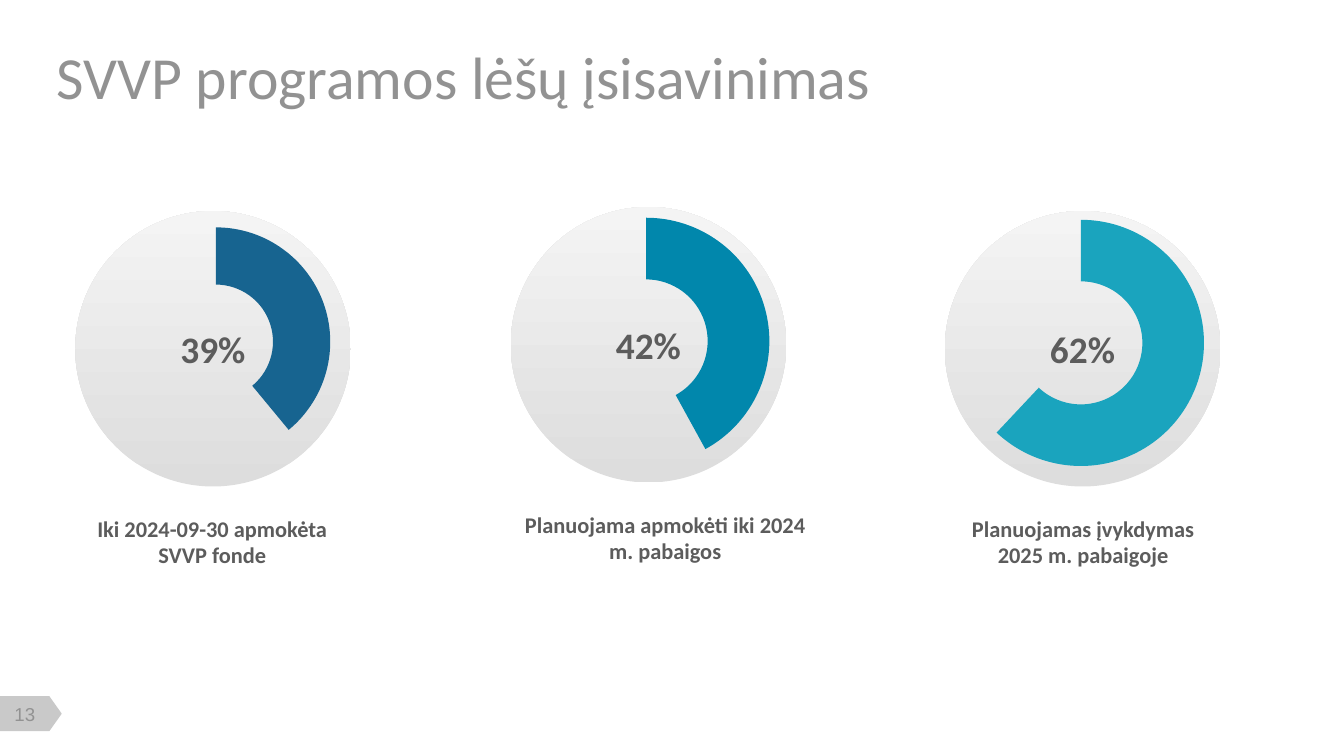
from dataclasses import dataclass

from lxml import etree
from pptx import Presentation
from pptx.chart.data import CategoryChartData
from pptx.dml.color import RGBColor
from pptx.enum.chart import XL_CHART_TYPE
from pptx.enum.shapes import MSO_SHAPE
from pptx.enum.text import MSO_ANCHOR, PP_ALIGN
from pptx.oxml.ns import qn
from pptx.util import Inches, Pt

DOUGHNUT = XL_CHART_TYPE.DOUGHNUT
ELLIPSE = MSO_SHAPE.OVAL
PAGE_TAG = MSO_SHAPE.FLOWCHART_OFFPAGE_CONNECTOR
TOP, MIDDLE = MSO_ANCHOR.TOP, MSO_ANCHOR.MIDDLE
LEFT, CENTER = PP_ALIGN.LEFT, PP_ALIGN.CENTER

GREY, DARK_GREY, TAG_GREY = "929292", "5C5C5C", "C9C9C9"
DISC_BOTTOM, DISC_TOP = "DDDDDD", "F4F4F4"
DISC_SIZE = 2.05
HOLE_PERCENT = 64


@dataclass
class Area:
    left: float
    top: float
    width: float
    height: float

    def lengths(self) -> list:
        return [Inches(v) for v in (self.left, self.top, self.width, self.height)]


@dataclass
class Gauge:
    percent: int
    color: str
    caption: str
    disc: Area
    ring: Area
    plot: Area  # percent of the ring area
    label: Area


GAUGES = [
    Gauge(39, "176490", "Iki 2024-09-30 apmokėta SVVP fonde",
          Area(0.56, 1.57, DISC_SIZE, DISC_SIZE), Area(0.56, 1.44, 2.05, 2.25),
          Area(9.5, 11.2, 83.1, 75.7), Area(0.63, 3.83, 1.9, 0.4)),
    Gauge(42, "0187AC", "Planuojama apmokėti iki 2024 m. pabaigos",
          Area(3.8, 1.54, DISC_SIZE, DISC_SIZE), Area(3.73, 1.4, 2.16, 2.23),
          Area(7.4, 9.8, 85, 82.5), Area(3.88, 3.8, 2.14, 0.4)),
    Gauge(62, "1AA4BE", "Planuojamas įvykdymas 2025 m. pabaigoje",
          Area(7.03, 1.57, DISC_SIZE, DISC_SIZE), Area(7.03, 1.42, 2.08, 2.2),
          Area(4.6, 9.8, 88.2, 83.3), Area(7.11, 3.83, 1.9, 0.4)),
]


def rgb(value: str) -> RGBColor:
    return RGBColor.from_string(value)


def write(shape, text: str, size: int, color: str, bold: bool = False,
          font: str = "Calibri", align=CENTER, anchor=MIDDLE,
          margins: tuple = (0, 0, 0, 0)) -> None:
    frame = shape.text_frame
    left, top, right, bottom = (Inches(m) for m in margins)
    frame_format = {"word_wrap": True, "vertical_anchor": anchor,
                    "margin_left": left, "margin_top": top,
                    "margin_right": right, "margin_bottom": bottom}
    for name, value in frame_format.items():
        setattr(frame, name, value)
    para = frame.paragraphs[0]
    para.alignment = align
    span = para.add_run()
    span.text = text
    for name, value in {"size": Pt(size), "name": font, "bold": bold}.items():
        setattr(span.font, name, value)
    span.font.color.rgb = rgb(color)


def add_text(page, area: Area, text: str, size: int, color: str, **style) -> None:
    write(page.shapes.add_textbox(*area.lengths()), text, size, color, **style)


def add_plain_shape(page, kind, area: Area):
    shape = page.shapes.add_shape(kind, *area.lengths())
    shape.shadow.inherit = False
    shape.line.fill.background()
    return shape


def add_disc(page, gauge: Gauge) -> None:
    disc = add_plain_shape(page, ELLIPSE, gauge.disc)
    disc.fill.gradient()
    disc.fill.gradient_angle = 90
    for stop, color in zip(disc.fill.gradient_stops, (DISC_BOTTOM, DISC_TOP)):
        stop.color.rgb = rgb(color)
    write(disc, f"{gauge.percent}%", 20, DARK_GREY, bold=True)


def set_plot_layout(chart, plot: Area) -> None:
    plot_area = chart._chartSpace.chart.plotArea
    for old in plot_area.findall(qn("c:layout")):
        plot_area.remove(old)
    layout = etree.Element(qn("c:layout"))
    manual = etree.SubElement(layout, qn("c:manualLayout"))
    settings = {"layoutTarget": "inner", "xMode": "edge", "yMode": "edge"}
    for name, value in zip("xywh", (plot.left, plot.top, plot.width, plot.height)):
        settings[name] = round(value / 100, 3)
    for name, value in settings.items():
        etree.SubElement(manual, qn(f"c:{name}")).set("val", str(value))
    plot_area.insert(0, layout)


def add_ring(page, gauge: Gauge) -> None:
    data = CategoryChartData()
    data.categories = ["1", "2"]
    data.add_series("Series 1", (gauge.percent, 100 - gauge.percent))
    chart = page.shapes.add_chart(DOUGHNUT, *gauge.ring.lengths(), data).chart
    chart.has_legend = False
    chart.has_title = False
    chart.font.name = "Calibri"
    chart.font.size = Pt(18)
    chart.font.color.rgb = rgb("262626")
    plot = chart.plots[0]
    plot.vary_by_categories = True
    plot.has_data_labels = False
    done, rest = (plot.series[0].points[i].format for i in range(2))
    done.fill.solid()
    done.fill.fore_color.rgb = rgb(gauge.color)
    rest.fill.background()
    for part in (done, rest):
        part.line.fill.background()
    hole = chart._chartSpace.find(".//" + qn("c:holeSize"))
    hole.set("val", str(HOLE_PERCENT))
    set_plot_layout(chart, gauge.plot)


def main() -> None:
    deck = Presentation()
    deck.slide_width = Inches(10)
    deck.slide_height = deck.slide_width * 9 // 16
    page = deck.slides.add_slide(deck.slide_layouts[6])

    # Page number tag
    tag = add_plain_shape(page, PAGE_TAG, Area(0.1, 5.08, 0.26, 0.46))
    tag.rotation = 270
    tag.fill.solid()
    tag.fill.fore_color.rgb = rgb(TAG_GREY)
    add_text(page, Area(0.02, 5.23, 0.33, 0.17), "13", 10, GREY, font="Arial")

    # Discs lie behind the rings
    for gauge in GAUGES:
        add_disc(page, gauge)
    for gauge in GAUGES:
        add_ring(page, gauge)

    # Title and captions
    add_text(page, Area(0.42, 0.37, 9.15, 0.39), "SVVP programos lėšų įsisavinimas",
             32, GREY, align=LEFT, margins=(0, 0.05, 0.1, 0.05))
    for gauge in GAUGES:
        add_text(page, gauge.label, gauge.caption, 12, DARK_GREY, bold=True, anchor=TOP)

    deck.save("out.pptx")


if __name__ == "__main__":
    main()
